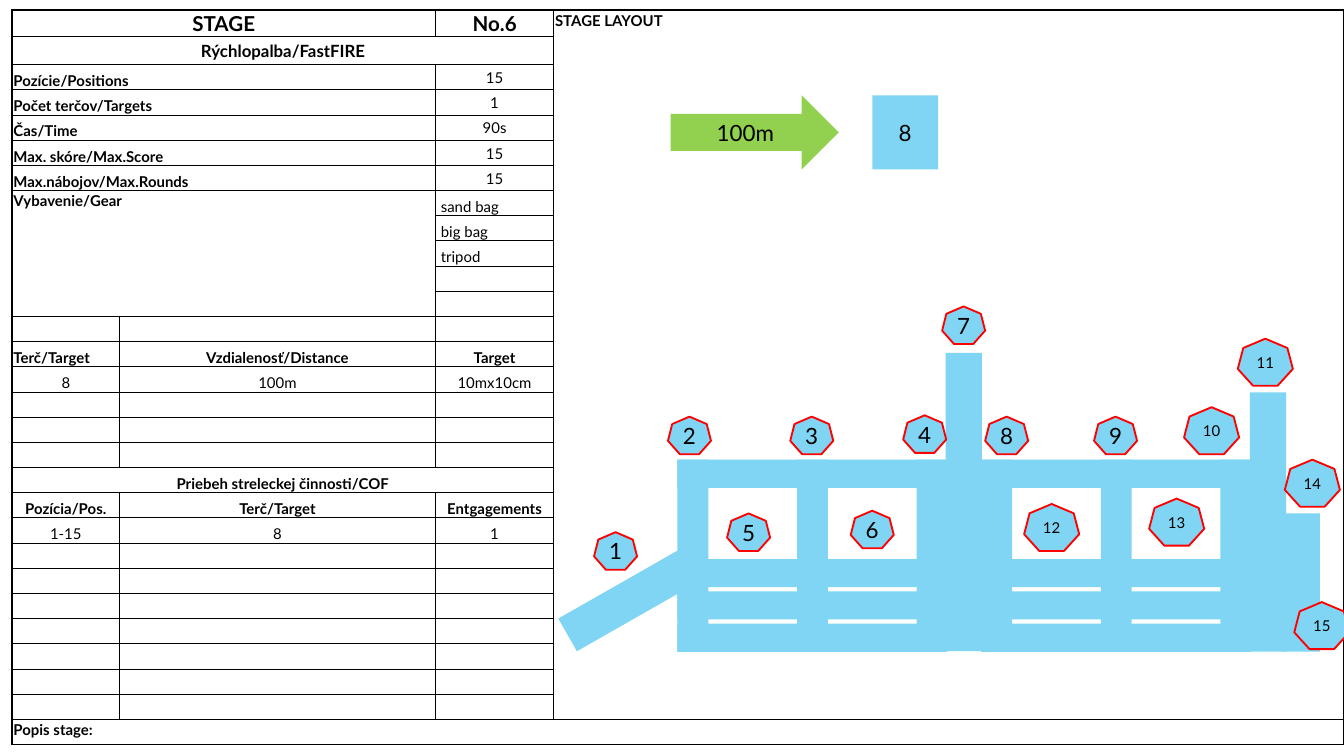
from dataclasses import dataclass
from typing import NamedTuple

import pptx
import pptx.dml.color
import pptx.enum.shapes
import pptx.enum.text
import pptx.oxml.ns
import pptx.util
from lxml import etree

SHAPE = pptx.enum.shapes.MSO_SHAPE
ALIGN = pptx.enum.text.PP_ALIGN
ANCHOR = pptx.enum.text.MSO_ANCHOR
qn = pptx.oxml.ns.qn


@dataclass(frozen=True)
class Theme:
    font: str = "Lato"
    ink: str = "000000"
    wall: str = "7FD5F3"
    direction: str = "92D050"
    marker_edge: str = "FF0000"
    title: int = 11
    subtitle: int = 9
    body: int = 8
    label: int = 12
    outer_rule: float = 1
    inner_rule: float = 0.5


THEME = Theme()

# The 16:9 slide is a grid of 1000 columns by 562.5 rows of square units.
GRID_COLS, GRID_ROWS = 1000, 562.5
UNIT = pptx.util.Inches(10) // GRID_COLS


class Box(NamedTuple):
    col: float
    row: float
    cols: float
    rows: float
    turn: float = 0


class Entry(NamedTuple):
    """Text of one table cell, with the rows and columns it spans."""
    row: int
    col: int
    text: str
    bold: bool = False
    align: ALIGN = ALIGN.CENTER
    anchor: ANCHOR = ANCHOR.BOTTOM
    size: int = THEME.body
    rows: int = 1
    cols: int = 1
    indent: int = 1


class Marker(NamedTuple):
    number: int
    col: float
    row: float


SHEET = Box(9, 7.5, 991, 546)
SHEET_COLS = (80, 235, 88, 588)
SHEET_ROWS = 29
SUBTITLE_ROW = 21

SPECS = (("Pozície/Positions", "15"), ("Počet terčov/Targets", "1"), ("Čas/Time", "90s"),
         ("Max. skóre/Max.Score", "15"), ("Max.nábojov/Max.Rounds", "15"))
GEAR = ("sand bag", "big bag", "tripod")
TRIPLES = (  # row, bold, texts of the three left columns
    (14, False, ("8", "100m", "10mx10cm")),
    (19, True, ("Pozícia/Pos.", "Terč/Target", "Entgagements")),
    (20, False, ("1-15", "8", "1")),
)

ENTRIES = [
    Entry(0, 0, "STAGE", True, size=THEME.title, cols=2),
    Entry(0, 2, "No.6", True, anchor=ANCHOR.MIDDLE, size=THEME.title),
    Entry(0, 3, "STAGE LAYOUT", True, ALIGN.LEFT, ANCHOR.TOP, rows=28),
    Entry(1, 0, "Rýchlopalba/FastFIRE", True, anchor=ANCHOR.MIDDLE, size=THEME.subtitle, cols=3),
    *(Entry(row, 0, name, True, ALIGN.LEFT, cols=2) for row, (name, _) in enumerate(SPECS, 2)),
    *(Entry(row, 2, value, anchor=ANCHOR.MIDDLE) for row, (_, value) in enumerate(SPECS, 2)),
    Entry(7, 0, "Vybavenie/Gear", True, ALIGN.LEFT, ANCHOR.TOP, rows=5, cols=2),
    *(Entry(row, 2, item, align=ALIGN.LEFT, indent=4) for row, item in enumerate(GEAR, 7)),
    Entry(13, 0, "Terč/Target", True, ALIGN.LEFT),
    Entry(13, 1, "Vzdialenosť/Distance", True),
    Entry(13, 2, "Target", True),
    Entry(18, 0, "Priebeh streleckej činnosti/COF", True, cols=3),
    *(Entry(row, col, text, bold) for row, bold, texts in TRIPLES for col, text in enumerate(texts)),
    Entry(28, 0, "Popis stage:", True, ALIGN.LEFT, ANCHOR.TOP, cols=4),
]

BAY_COLS = (504, 730)
RAIL_ROWS = (464, 342, 416, 440)
POST_OFFSETS = (118, -60, 29)
RAMP = Box(415, 431, 111, 28, 150.3)
TOWERS = (Box(606, 360, 222, 27, 90), Box(847, 375, 193, 27, 90), Box(917, 420, 103, 27, 90))

MARKERS = (
    Marker(1, 442, 396), Marker(2, 497, 310), Marker(3, 588, 310), Marker(4, 672, 309),
    Marker(5, 541, 382), Marker(6, 633, 380), Marker(7, 701, 228), Marker(8, 733, 310),
    Marker(9, 814, 310), Marker(10, 881, 303), Marker(11, 921, 252), Marker(12, 762, 375),
    Marker(13, 855, 371), Marker(14, 956, 342), Marker(15, 963, 448),
)


def units(count: float) -> pptx.util.Emu:
    return pptx.util.Emu(round(count * UNIT))


def rgb(value: str) -> pptx.dml.color.RGBColor:
    return pptx.dml.color.RGBColor.from_string(value)


def add_text(paragraph, text: str, size: int, bold: bool = False) -> None:
    run = paragraph.add_run()
    run.text = text
    run.font.name = THEME.font
    run.font.size = pptx.util.Pt(size)
    run.font.bold = bold
    run.font.color.rgb = rgb(THEME.ink)


def add_block(slide, kind: SHAPE, box: Box, fill: str = THEME.wall, edge: str = "",
              text: str = "", size: int = THEME.label) -> None:
    block = slide.shapes.add_shape(kind, *(units(length) for length in box[:4]))
    block.rotation = box.turn
    block.shadow.inherit = False
    block.fill.solid()
    block.fill.fore_color.rgb = rgb(fill)
    if edge:
        block.line.color.rgb = rgb(edge)
        block.line.width = pptx.util.Pt(1)
    else:
        block.line.fill.background()
    if text:
        frame = block.text_frame
        frame.word_wrap = False
        frame.vertical_anchor = ANCHOR.MIDDLE
        frame.margin_left = frame.margin_right = frame.margin_top = frame.margin_bottom = units(10)
        frame.paragraphs[0].alignment = ALIGN.CENTER
        add_text(frame.paragraphs[0], text, size)


def rule_cell(cell, row: int, col: int) -> None:
    """Draw the cell's borders, heavier along the rim of the sheet."""
    on_rim = {
        "L": col == 0,
        "R": col + cell.span_width == len(SHEET_COLS),
        "T": row == 0,
        "B": row + cell.span_height == SHEET_ROWS,
    }
    properties = cell._tc.get_or_add_tcPr()
    for index, (side, heavy) in enumerate(on_rim.items()):
        width = pptx.util.Pt(THEME.outer_rule if heavy else THEME.inner_rule)
        border = etree.Element(qn(f"a:ln{side}"), w=str(width))
        fill = etree.SubElement(border, qn("a:solidFill"))
        etree.SubElement(fill, qn("a:srgbClr"), val=THEME.ink)
        properties.insert(index, border)


def add_sheet(slide) -> None:
    table = slide.shapes.add_table(SHEET_ROWS, len(SHEET_COLS),
                                   *(units(length) for length in SHEET[:4])).table
    table.first_row = table.horz_banding = False
    for column, width in zip(table.columns, SHEET_COLS):
        column.width = units(width)
    for row in table.rows:
        row.height = units((SHEET.rows - SUBTITLE_ROW) / (SHEET_ROWS - 1))
    table.rows[1].height = units(SUBTITLE_ROW)

    for entry in ENTRIES:
        if entry.rows * entry.cols > 1:
            last = table.cell(entry.row + entry.rows - 1, entry.col + entry.cols - 1)
            table.cell(entry.row, entry.col).merge(last)

    entries = {(entry.row, entry.col): entry for entry in ENTRIES}
    for row in range(SHEET_ROWS):
        for col in range(len(SHEET_COLS)):
            cell = table.cell(row, col)
            entry = entries.get((row, col), Entry(row, col, ""))
            cell.fill.background()
            cell.margin_left, cell.margin_bottom = units(entry.indent), 0
            cell.margin_right = cell.margin_top = units(1)
            cell.vertical_anchor = entry.anchor
            paragraph = cell.text_frame.paragraphs[0]
            paragraph.alignment = entry.align
            if entry.text:
                add_text(paragraph, entry.text, entry.size, entry.bold)
            else:
                # Keeps an empty cell from stretching its row.
                etree.SubElement(paragraph._p, qn("a:endParaRPr"), sz=str(THEME.body * 100))
            if not cell.is_spanned:
                rule_cell(cell, row, col)


def add_layout(slide) -> None:
    add_block(slide, SHAPE.RIGHT_ARROW, Box(499, 71, 125, 55), THEME.direction, text="100m")
    add_block(slide, SHAPE.RECTANGLE, Box(649, 71, 49, 55), text="8")
    rails = [Box(bay, row, 200, 21) for bay in BAY_COLS for row in RAIL_ROWS]
    posts = [Box(bay + offset, 402, 143, 23, 90) for bay in BAY_COLS for offset in POST_OFFSETS]
    for beam in (*rails, *posts, RAMP, *TOWERS):
        add_block(slide, SHAPE.RECTANGLE, beam)
    for number, col, row in MARKERS:
        cols, rows, size = (32, 28, THEME.label) if number < 10 else (41, 35, THEME.body)
        add_block(slide, SHAPE.HEPTAGON, Box(col, row, cols, rows),
                  edge=THEME.marker_edge, text=str(number), size=size)


def main() -> None:
    deck = pptx.Presentation()
    deck.slide_width, deck.slide_height = units(GRID_COLS), units(GRID_ROWS)
    slide = deck.slides.add_slide(deck.slide_layouts[6])
    add_sheet(slide)
    add_layout(slide)
    deck.save("out.pptx")


if __name__ == "__main__":
    main()
